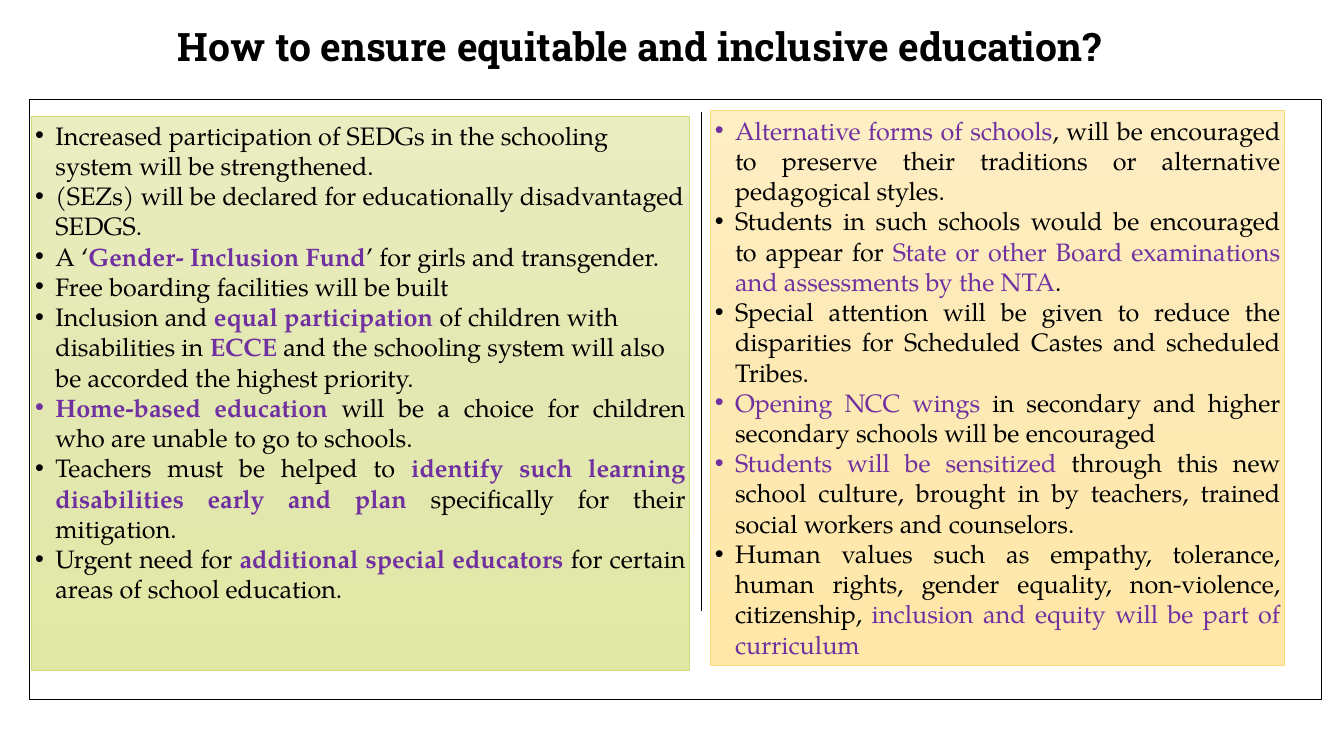
from copy import deepcopy

from lxml.etree import SubElement
from pptx import Presentation
from pptx.dml.color import RGBColor
from pptx.enum.shapes import MSO_CONNECTOR, MSO_SHAPE
from pptx.enum.text import MSO_ANCHOR, PP_ALIGN
from pptx.oxml.ns import qn
from pptx.util import Pt

PX = 9144
INK = {"text": "000000", "accent": "7030A0", "white": "FFFFFF"}
GREEN = {"edge": "D2DA7A", "stops": ("E9EDC0", "E3E8B2", "E1E8A5")}
AMBER = {"edge": "FADA7A", "stops": ("FEEEC4", "FDE9B4", "FFE7A7")}
TITLE = "How to ensure equitable and inclusive education? "
MARK = "*"

LEFT = [
    "Increased participation of SEDGs in the schooling system will be strengthened.",
    "(SEZs) will be declared for educationally disadvantaged SEDGS.",
    "A ‘*Gender- Inclusion Fund*’ for girls and transgender.",
    "Free boarding facilities will be built",
    "Inclusion and *equal participation *of children with disabilities in *ECCE *"
    "and the schooling system will also be accorded the highest priority.",
]
LEFT_JUST = [
    "*Home-based education *will be a choice for children who are unable to go to schools.",
    "Teachers must be helped to *identify such learning disabilities early and plan *"
    "specifically for their mitigation.",
    "Urgent need for *additional special educators *for certain areas of school education.",
]
RIGHT = [
    "*Alternative forms of schools*, will be encouraged to preserve their traditions "
    "or alternative pedagogical styles.",
    "Students in such schools would be encouraged to appear for *State or other Board "
    "examinations and assessments by the NTA*.",
    "Special attention will be given to reduce the disparities for Scheduled Castes "
    "and scheduled Tribes.",
    "*Opening NCC wings *in secondary and higher secondary schools will be encouraged",
    "*Students will be sensitized *through this new school culture, brought in by "
    "teachers, trained social workers and counselors.",
    "Human values such as empathy, tolerance, human rights, gender equality, "
    "non-violence, citizenship, *inclusion and equity will be part of curriculum",
]


def rgb(code):
    """Turn a hex string into a colour."""
    return RGBColor.from_string(code)


def add_box(slide, place, edge, width):
    """Add a plain rectangle with an outline."""
    box = slide.shapes.add_shape(MSO_SHAPE.RECTANGLE, *(n * PX for n in place))
    box.shadow.inherit = False
    box.line.color.rgb = rgb(edge)
    box.line.width = Pt(width)
    return box


def add_frame(slide, place):
    """Add the white frame behind both panels."""
    box = add_box(slide, place, INK["text"], 0.75)
    box.fill.solid()
    box.fill.fore_color.rgb = rgb(INK["white"])


def shade(box, codes):
    """Fill a box from top to bottom with three even stops."""
    box.fill.gradient()
    box.fill.gradient_angle = 270
    stops = box._element.spPr.find(qn("a:gradFill")).find(qn("a:gsLst"))
    mid = deepcopy(stops[0])
    mid.set("pos", "50000")
    stops.insert(1, mid)
    for stop, code in zip(box.fill.gradient_stops, codes):
        stop.color.rgb = rgb(code)


def add_point(para, text, align, bold):
    """Write one bulleted point, with marked parts in the accent colour."""
    para.alignment = align
    props = para._p.get_or_add_pPr()
    props.set("marL", str(20 * PX))
    props.set("indent", str(-20 * PX))
    SubElement(props, qn("a:buFont"), typeface="Arial")
    SubElement(props, qn("a:buChar"), char="•")
    para.font.name = "TeX Gyre Pagella"
    para.font.size = Pt(18)
    for i, part in enumerate(text.split(MARK)):
        if part:
            run = para.add_run()
            run.text = part
            run.font.color.rgb = rgb(INK["accent" if i % 2 else "text"])
            run.font.bold = bold and i % 2 == 1


def add_panel(slide, place, theme, points, bold):
    """Add a shaded panel of (text, alignment) points."""
    box = add_box(slide, place, theme["edge"], 0.5)
    shade(box, theme["stops"])
    frame = box.text_frame
    frame.word_wrap = True
    frame.vertical_anchor = MSO_ANCHOR.TOP
    frame.margin_left = frame.margin_right = 4 * PX
    frame.margin_top = frame.margin_bottom = 4 * PX
    for i, (text, align) in enumerate(points):
        para = frame.add_paragraph() if i else frame.paragraphs[0]
        add_point(para, text, align, bold)


def add_rule(slide, x, top, end):
    """Add the upright line between the panels."""
    rule = slide.shapes.add_connector(
        MSO_CONNECTOR.STRAIGHT, x * PX, top * PX, x * PX, end * PX)
    rule.line.color.rgb = rgb(INK["text"])
    rule.line.width = Pt(0.75)
    SubElement(rule._element.spPr, qn("a:effectLst"))


def set_title(slide, place):
    """Place and format the title."""
    title = slide.shapes.title
    title.left, title.top, title.width, title.height = (n * PX for n in place)
    title.text_frame.text = TITLE
    title.text_frame.vertical_anchor = MSO_ANCHOR.MIDDLE
    para = title.text_frame.paragraphs[0]
    para.alignment = PP_ALIGN.CENTER
    para.line_spacing = 0.9
    para.font.name = "Roboto Slab"
    para.font.size = Pt(28)
    para.font.bold = True
    para.font.color.rgb = rgb(INK["text"])


def main():
    """Build the slide and save it."""
    deck = Presentation()
    deck.slide_width, deck.slide_height = 1333 * PX, 750 * PX
    slide = deck.slides.add_slide(deck.slide_layouts[5])
    set_title(slide, (0, 0, 1278, 96))
    add_frame(slide, (29, 99, 1282, 595))
    add_rule(slide, 696, 111, 606)
    left = [(text, PP_ALIGN.LEFT) for text in LEFT]
    left += [(text, PP_ALIGN.JUSTIFY) for text in LEFT_JUST]
    right = [(text, PP_ALIGN.JUSTIFY) for text in RIGHT]
    add_panel(slide, (705, 110, 569, 550), AMBER, right, False)
    add_panel(slide, (31, 115, 653, 550), GREEN, left, True)
    deck.save("out.pptx")


if __name__ == "__main__":
    main()
